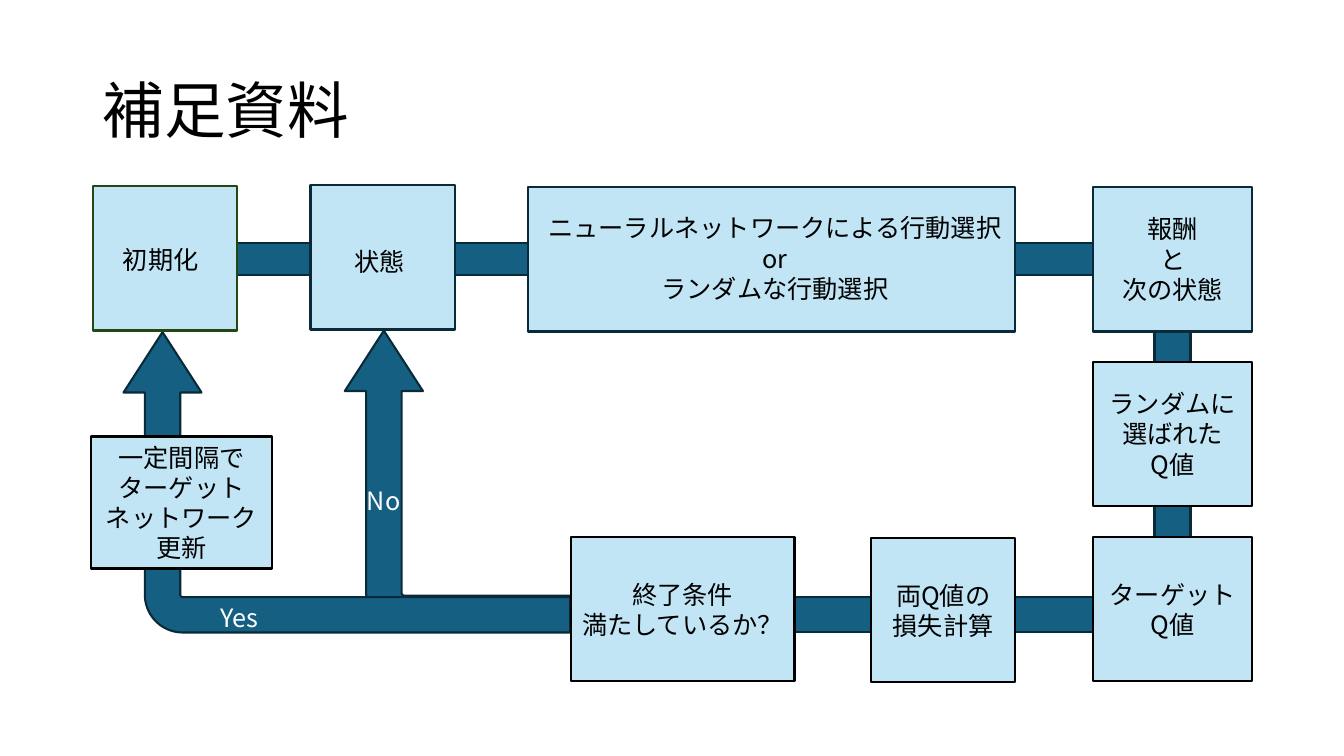
from lxml import etree
from pptx import Presentation
from pptx import util as u
from pptx.dml.color import RGBColor
from pptx.enum import shapes, text
from pptx.oxml.ns import qn

FONT = "Noto Sans CJK JP"
PIPE, PIPE_EDGE = "156082", "092A39"
BOX, BLACK, WHITE = "C1E5F5", "000000", "FFFFFF"
KIND = shapes.MSO_SHAPE
CENTER, LEFT = text.PP_ALIGN.CENTER, text.PP_ALIGN.LEFT

deck = Presentation()
deck.slide_width, deck.slide_height = u.Inches(13.33), u.Inches(7.5)
slide = deck.slides.add_slide(deck.slide_layouts[6])


def add_block(kind, at, fill, edge, rotation=0):
    block = slide.shapes.add_shape(kind, *map(u.Inches, at))
    block.rotation = rotation
    block.shadow.inherit = False
    block.fill.solid()
    block.fill.fore_color.rgb = RGBColor.from_string(fill)
    block.line.color.rgb = RGBColor.from_string(edge)
    block.line.width = u.Pt(1.5)
    return block


def write(holder, lines, color=BLACK, size=18, align=CENTER, anchor=text.MSO_ANCHOR.MIDDLE):
    """Fill a shape with one paragraph per line, in the slide's Japanese font."""
    frame = holder.text_frame
    frame.word_wrap = True
    frame.vertical_anchor = anchor
    frame.text = lines
    for paragraph in frame.paragraphs:
        paragraph.alignment = align
        font = paragraph.font
        font.size = u.Pt(size)
        font.color.rgb = RGBColor.from_string(color)
        font.name = FONT
        etree.SubElement(font._rPr, qn("a:ea"), typeface=FONT)
    return frame


# Pipes behind the boxes
pipes = [
    (2.83, 5.92, 8.79, 0.35),
    (11.46, 2.39, 0.35, 3.87),
    (11.45, 2.41, 0.35, 3.87),
    (2.34, 2.41, 9.28, 0.32),
]
for at in pipes:
    add_block(KIND.RECTANGLE, at, PIPE, PIPE_EDGE)

# Return arrows: "No" runs behind the boxes, "Yes" behind the update step only
bends = [(3.94, 2.76, 2.98, 4.02), (1.95, 2.57, 2.98, 4.43)]
for at in bends:
    bend = add_block(KIND.BENT_ARROW, at, PIPE, PIPE_EDGE, rotation=270)
    for i, value in enumerate((0.118, 0.13, 0.201, 0.126)):
        bend.adjustments[i] = value

title = slide.shapes.add_textbox(*map(u.Inches, (0.92, 0.4, 11.5, 1.45)))
write(title, "補足資料", size=44, align=LEFT).paragraphs[0].line_spacing = 0.9

# Steps of the learning loop: place, edge colour, text inside
steps = [
    ((0.92, 1.85, 1.43, 1.43), "224914", ""),
    ((3.08, 1.84, 1.43, 1.43), PIPE_EDGE, ""),
    ((5.24, 1.86, 4.83, 1.43), PIPE_EDGE, ""),
    ((10.84, 1.86, 1.58, 1.43), PIPE_EDGE, ""),
    ((10.84, 3.59, 1.58, 1.43), BLACK, "ランダムに選ばれた\nQ値"),
    ((10.84, 5.33, 1.58, 1.43), BLACK, "ターゲットQ値"),
    ((8.64, 5.34, 1.43, 1.43), BLACK, "両Q値の\n損失計算"),
    ((5.66, 5.33, 2.22, 1.43), BLACK, "終了条件\n満たしているか？"),
    ((0.9, 4.33, 1.8, 1.31), BLACK, "一定間隔で\nターゲットネットワーク更新"),
]
for at, edge, wording in steps:
    step = add_block(KIND.RECTANGLE, at, BOX, edge)
    if wording:
        write(step, wording)

# Labels laid over the top row and the return arrows
labels = [
    ((1.12, 2.37, 1.01, 0.4), "初期化", BLACK, LEFT),
    ((3.42, 2.39, 0.75, 0.4), "状態", BLACK, LEFT),
    ((5.27, 2.06, 4.83, 1.01), "ニューラルネットワークによる行動選択\nor\nランダムな行動選択", BLACK, CENTER),
    ((10.84, 2.07, 1.58, 1.01), "報酬\nと\n次の状態", BLACK, CENTER),
    ((2.09, 5.93, 1.22, 0.4), "Yes", WHITE, LEFT),
    ((3.54, 4.77, 0.87, 0.4), "No", WHITE, LEFT),
]
for at, wording, color, align in labels:
    label = slide.shapes.add_textbox(*map(u.Inches, at))
    write(label, wording, color, align=align, anchor=text.MSO_ANCHOR.TOP)

deck.save("out.pptx")
